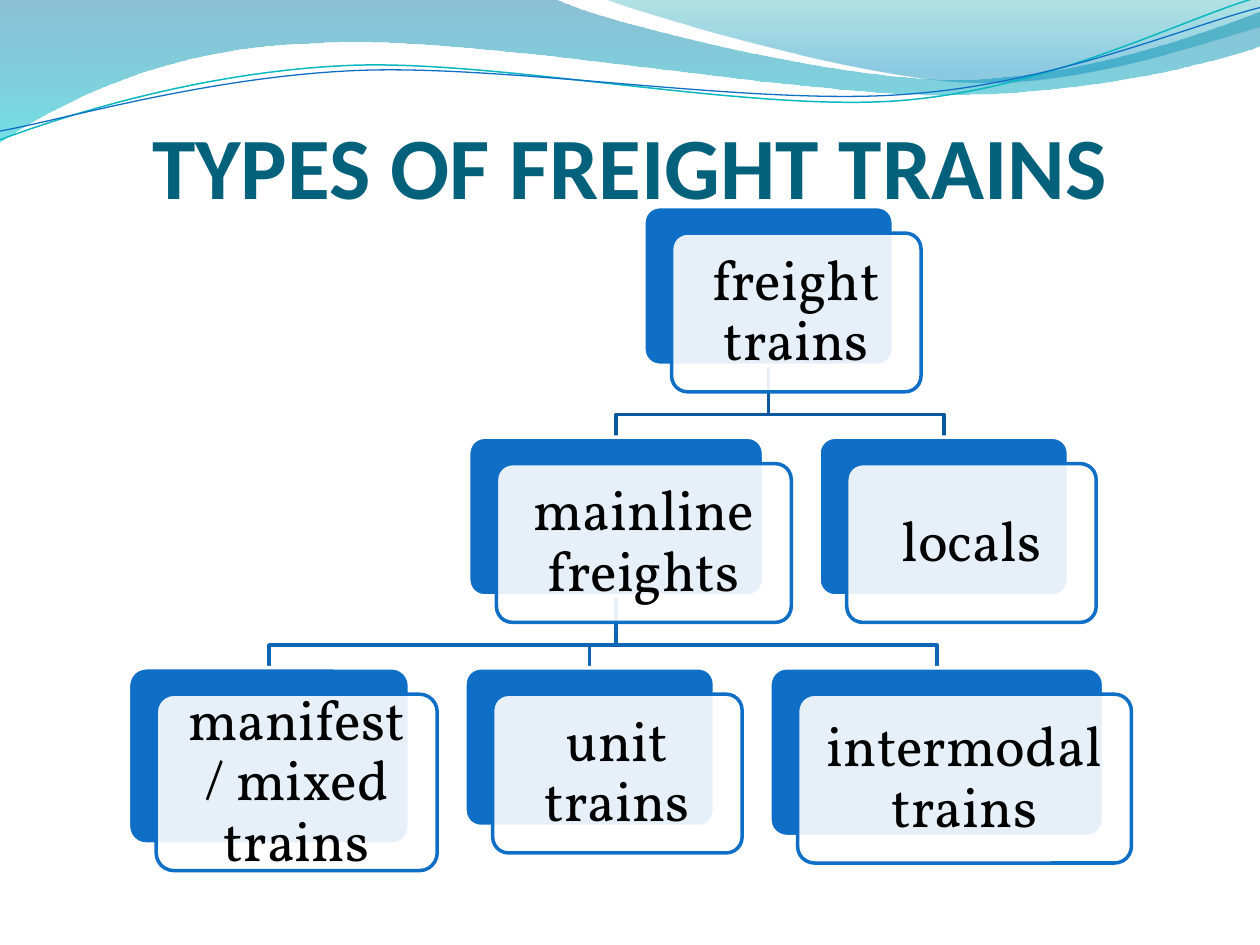
from lxml.etree import SubElement
from pptx import Presentation
from pptx.dml.color import RGBColor
from pptx.enum.shapes import MSO_SHAPE
from pptx.enum.text import MSO_ANCHOR, PP_ALIGN
from pptx.oxml.ns import qn
from pptx.util import Inches, Pt

COLORS = {
    "title": "04617B", "text": "000000", "white": "FFFFFF", "box": "0F6FC6",
    "upper_link": "0C599F", "lower_link": "0E65B4", "teal_line": "0AB8BF",
    "wave_blue": "0074A1", "wave_cyan": "00C6CF",
    "crest_teal": "00A1A9", "crest_blue": "008BBF",
}

presentation = Presentation()
presentation.slide_width = Inches(10)
presentation.slide_height = Inches(7.5)
slide = presentation.slides.add_slide(presentation.slide_layouts[6])


def write_text(shape, text, size, font, color, bold=False,
               anchor=MSO_ANCHOR.MIDDLE, margins=(0, 0, 0, 0), spacing=1.0):
    frame = shape.text_frame
    frame.word_wrap = True
    frame.vertical_anchor = anchor
    (frame.margin_left, frame.margin_top,
     frame.margin_right, frame.margin_bottom) = map(Inches, margins)
    paragraph = frame.paragraphs[0]
    paragraph.alignment = PP_ALIGN.CENTER
    paragraph.line_spacing = spacing
    run = paragraph.add_run()
    run.text = text
    run.font.size = Pt(size)
    run.font.name = font
    run.font.bold = bold
    run.font.color.rgb = RGBColor.from_string(COLORS[color])


def draw_path(start, segments, line=None, width=1, gradient=None):
    """Draw an outline; a segment is one end point or three Bezier points.

    A gradient is a list of (position, colour, opacity percent), top to bottom.
    """
    points = [(Inches(x), Inches(y)) for segment in segments for x, y in segment]
    builder = slide.shapes.build_freeform(Inches(start[0]), Inches(start[1]))
    builder.add_line_segments(points, close=gradient is not None)
    shape = builder.convert_to_shape()
    shape.shadow.inherit = False

    # Join the three straight steps of each Bezier segment into one curve
    steps = iter(list(shape._element.iter(qn("a:lnTo"))))
    for segment in segments:
        first, *others = [next(steps) for _ in segment]
        if others:
            first.tag = qn("a:cubicBezTo")
        for other in others:
            first.append(other[0])
            other.getparent().remove(other)

    if gradient:
        shape.fill.gradient()
        shape.fill.gradient_angle = 270
        for stop, (position, color, _) in zip(shape.fill.gradient_stops, gradient):
            stop.position = position
            stop.color.rgb = RGBColor.from_string(COLORS[color])
        for element, (_, _, opacity) in zip(shape._element.iter(qn("a:srgbClr")), gradient):
            SubElement(element, qn("a:alpha"), val=str(opacity * 1000))
    else:
        shape.fill.background()
    if line:
        shape.line.color.rgb = RGBColor.from_string(COLORS[line])
        shape.line.width = Pt(width)
    else:
        shape.line.fill.background()


# Waves along the top
draw_path((0, 0), [
    [(4.4, -0.01)],
    [(4.76, 0.17), (6.64, 0.63), (7.58, 0.63)],
    [(8.53, 0.63), (9.58, 0.26), (10, 0.09)],
    [(10.01, 0.36)],
    [(9.83, 0.44), (8.7, 0.76), (7.46, 0.75)],
    [(6.22, 0.75), (3.82, 0.28), (2.57, 0.34)],
    [(1.29, 0.36), (0.46, 0.83), (-0.01, 1.13)],
    [(0, 0)],
], gradient=[(0, "wave_blue", 45), (1, "wave_cyan", 55)])
draw_path((4.79, -0.01), [
    [(5.09, 0.11), (6.82, 0.62), (7.69, 0.65)],
    [(8.56, 0.69), (9.61, 0.32), (10, 0.21)],
    [(10, 0)],
    [(4.79, -0.01)],
], gradient=[(0, "crest_teal", 30), (0.8, "crest_blue", 45)])
draw_path((0, 1.11), [
    [(0.48, 0.93), (1.58, 0.57), (2.77, 0.52)],
    [(3.95, 0.47), (5.93, 0.89), (7.13, 0.8)],
    [(8.33, 0.71), (9.38, 0.15), (9.98, -0.02)],
], line="teal_line", width=0.85)
draw_path((0, 1.04), [
    [(0.47, 0.96), (1.64, 0.61), (2.83, 0.56)],
    [(4.03, 0.51), (5.97, 0.84), (7.17, 0.75)],
    [(8.36, 0.67), (9.41, 0.21), (10, 0.06)],
], line="box", width=0.75)

title = slide.shapes.add_textbox(Inches(0.5), Inches(0.55), Inches(9), Inches(1.17))
write_text(title, "TYPES OF FREIGHT TRAINS", size=50, font="Calibri", color="title",
           bold=True, anchor=MSO_ANCHOR.BOTTOM, margins=(0, 0.05, 0, 0))

# Tree of train types: text -> (parent, level, left, width, height)
TREE = {
    "freight trains": (None, 0, 5.11, 1.98, 1.26),
    "mainline freights": ("freight trains", 1, 3.72, 2.34, 1.26),
    "manifest / mixed trains": ("mainline freights", 2, 1.02, 2.23, 1.4),
    "unit trains": ("mainline freights", 2, 3.69, 1.98, 1.26),
    "intermodal trains": ("mainline freights", 2, 6.11, 2.65, 1.34),
    "locals": ("freight trains", 1, 6.5, 1.98, 1.26),
}
TOP, LEVEL_STEP = 1.64, 1.83
ELBOW_DROP = 0.39
FRONT_OFFSET = 0.22, 0.21
LINK_COLORS = {1: "upper_link", 2: "lower_link"}

for parent, level, left, width, height in TREE.values():
    if parent is None:
        continue
    _, parent_level, parent_left, parent_width, parent_height = TREE[parent]
    start_x = parent_left + parent_width / 2
    start_y = TOP + parent_level * LEVEL_STEP + parent_height
    end_x = left + width / 2
    elbow_y = start_y + ELBOW_DROP
    draw_path((start_x, start_y),
              [[(start_x, elbow_y)], [(end_x, elbow_y)], [(end_x, TOP + level * LEVEL_STEP)]],
              line=LINK_COLORS[level], width=2)

for label, (_, level, left, width, height) in TREE.items():
    top = TOP + level * LEVEL_STEP
    for (shift_x, shift_y), fill, line in (((0, 0), "box", "white"),
                                           (FRONT_OFFSET, "white", "box")):
        box = slide.shapes.add_shape(
            MSO_SHAPE.ROUNDED_RECTANGLE, Inches(left + shift_x), Inches(top + shift_y),
            Inches(width), Inches(height))
        box.adjustments[0] = 0.1
        box.shadow.inherit = False
        box.fill.solid()
        box.fill.fore_color.rgb = RGBColor.from_string(COLORS[fill])
        box.line.color.rgb = RGBColor.from_string(COLORS[line])
        box.line.width = Pt(2)
    # The front box is the last one drawn: it is translucent and holds the text
    fill_color = box._element.spPr.find(qn("a:solidFill")).find(qn("a:srgbClr"))
    SubElement(fill_color, qn("a:alpha"), val="90000")
    write_text(box, label, size=32, font="Vollkorn", color="text",
               margins=(0.09,) * 4, spacing=0.9)

presentation.save("out.pptx")
